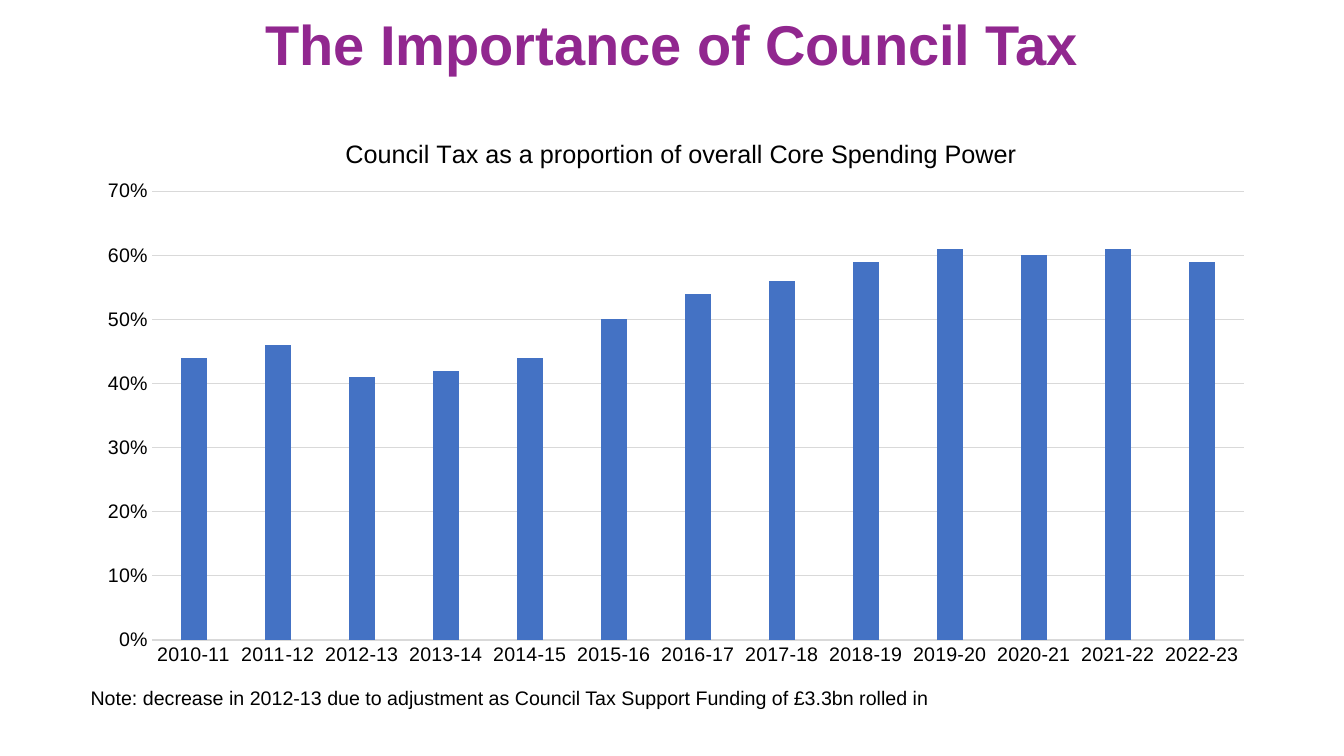
from lxml import etree
from pptx import Presentation
from pptx.chart.data import CategoryChartData
from pptx.dml.color import RGBColor
from pptx.enum.chart import XL_CHART_TYPE, XL_TICK_MARK
from pptx.enum.text import MSO_ANCHOR, PP_ALIGN
from pptx.oxml.ns import qn
from pptx.util import Pt

COLUMNS = XL_CHART_TYPE.COLUMN_CLUSTERED
NO_TICK = XL_TICK_MARK.NONE
MIDDLE = MSO_ANCHOR.MIDDLE
LEFT, CENTER = PP_ALIGN.LEFT, PP_ALIGN.CENTER

PURPLE, BLACK, BLUE, GRAY = "91278F", "000000", "4472C4", "D9D9D9"

FIRST_YEAR = 2010
SHARES = [0.44, 0.46, 0.41, 0.42, 0.44, 0.5, 0.54,
          0.56, 0.59, 0.61, 0.6, 0.61, 0.59]


def color(value):
    return RGBColor.from_string(value)


def set_values(target, values):
    for name, value in values.items():
        setattr(target, name, value)


def set_layout(parent, index, values):
    """Place a chart part by fractions of the chart area."""
    for old in parent.findall(qn("c:layout")):
        parent.remove(old)
    layout = etree.Element(qn("c:layout"))
    manual = etree.SubElement(layout, qn("c:manualLayout"))
    for tag, value in values.items():
        etree.SubElement(manual, qn("c:" + tag)).set("val", str(value))
    parent.insert(index, layout)


class CouncilSlide:
    font_name = "Arial"

    def __init__(self, deck):
        self.page = deck.slides.add_slide(deck.slide_layouts[6])

    def style_font(self, font, size, hex_color=BLACK, bold=False):
        set_values(font, {"name": self.font_name, "size": Pt(size), "bold": bold})
        font.color.rgb = color(hex_color)

    def text(self, words, area, size, hex_color=BLACK, bold=False, align=LEFT):
        box = self.page.shapes.add_textbox(*map(Pt, area))
        set_values(box.text_frame, {"word_wrap": True, "vertical_anchor": MIDDLE})
        para = box.text_frame.paragraphs[0]
        para.alignment = align
        span = para.add_run()
        span.text = words
        self.style_font(span.font, size, hex_color, bold)

    def column_chart(self, title, categories, values, area, plot_area, title_at):
        data = CategoryChartData(number_format="0%")
        data.categories = categories
        data.add_series("Series 1", values)
        chart = self.page.shapes.add_chart(COLUMNS, *map(Pt, area), data).chart
        chart.has_legend = False
        self.style_font(chart.font, 10)

        # Columns
        plot = chart.plots[0]
        set_values(plot, {"gap_width": 219, "overlap": -27, "vary_by_categories": False})
        fill = plot.series[0].format.fill
        fill.solid()
        fill.fore_color.rgb = color(BLUE)

        # Axes and gridlines
        for axis in (chart.category_axis, chart.value_axis):
            set_values(axis, {"major_tick_mark": NO_TICK, "minor_tick_mark": NO_TICK})
            self.style_font(axis.tick_labels.font, 14)
        scale = chart.value_axis
        set_values(scale, {"minimum_scale": 0, "maximum_scale": 0.7,
                           "major_unit": 0.1, "has_major_gridlines": True})
        set_values(scale.tick_labels, {"number_format": "0%",
                                       "number_format_is_linked": False})
        scale.format.line.fill.background()
        for line in (chart.category_axis.format.line, scale.major_gridlines.format.line):
            line.color.rgb = color(GRAY)
            line.width = Pt(0.75)

        # Chart title
        chart.has_title = True
        chart.chart_title.include_in_layout = False
        span = chart.chart_title.text_frame.paragraphs[0].add_run()
        span.text = title
        self.style_font(span.font, 18)

        # Positions of the plot and of the title
        width, height = area[2:]
        left, top, plot_width, plot_height = plot_area
        modes = {"xMode": "edge", "yMode": "edge"}
        set_layout(chart.chart_title._element, 1, modes | {
            "x": title_at[0] / width, "y": title_at[1] / height})
        set_layout(plot._element.getparent(), 0, {"layoutTarget": "inner"} | modes | {
            "x": left / width, "y": top / height,
            "w": plot_width / width, "h": plot_height / height})


def main():
    deck = Presentation()
    set_values(deck, {"slide_width": Pt(960), "slide_height": Pt(540)})
    slide = CouncilSlide(deck)

    # Heading
    slide.text("The Importance of Council Tax", (72.7, 0, 814.3, 61.2), 40,
               PURPLE, bold=True, align=CENTER)

    # Footnote
    slide.text("Note: decrease in 2012-13 due to adjustment as Council Tax Support "
               "Funding of £3.3bn rolled in", (57.6, 478.8, 830.9, 39.6), 14)

    # Council tax share by financial year
    years = [f"{year}-{(year + 1) % 100}"
             for year in range(FIRST_YEAR, FIRST_YEAR + len(SHARES))]
    slide.column_chart("Council Tax as a proportion of overall Core Spending Power",
                       years, SHARES, area=(60.5, 77.8, 844.5, 406.8),
                       plot_area=(48, 58.7, 780, 320.7), title_at=(183, 17))

    deck.save("out.pptx")


if __name__ == "__main__":
    main()
